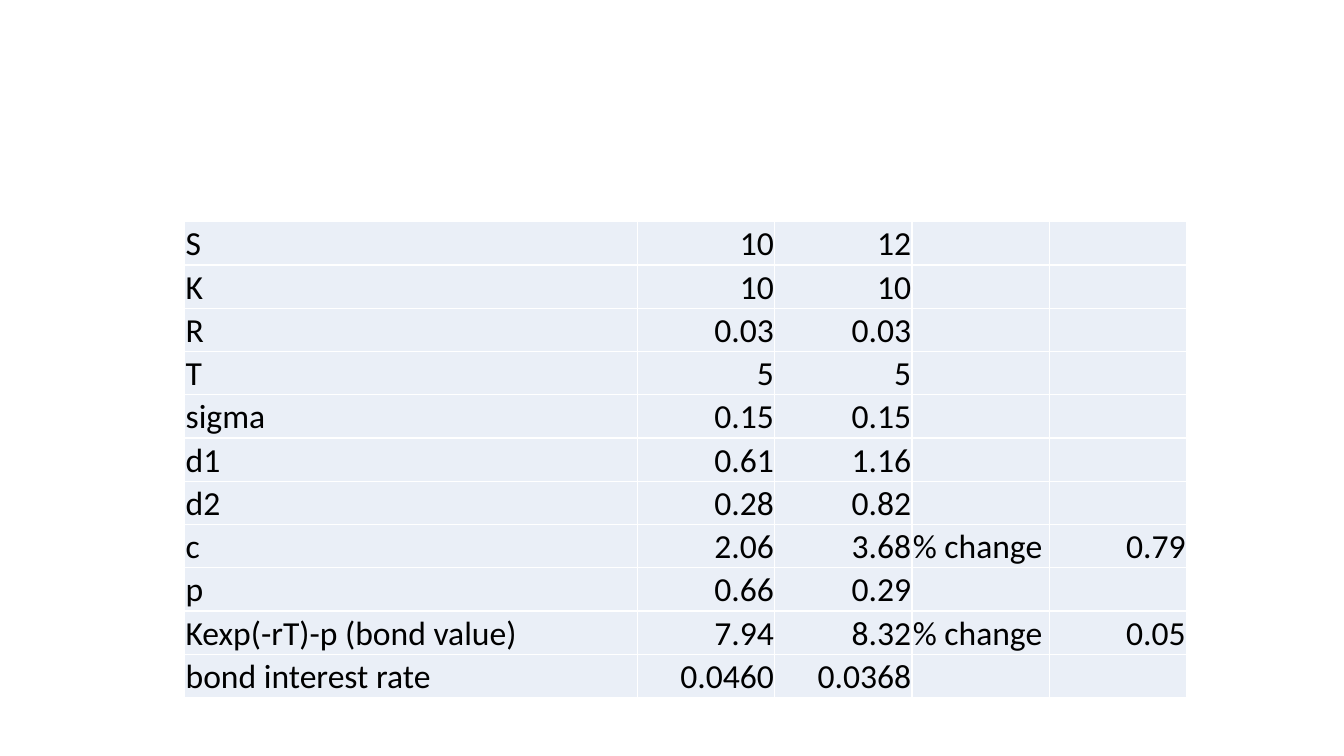
from lxml import etree
from pptx import Presentation
from pptx.dml.color import RGBColor
from pptx.enum.text import MSO_ANCHOR, PP_ALIGN
from pptx.oxml.ns import qn
from pptx.util import Pt

BOTTOM = MSO_ANCHOR.BOTTOM
LEFT, RIGHT = PP_ALIGN.LEFT, PP_ALIGN.RIGHT
BLANK = 6

COLORS = {"text": "000000", "fill": "EAEFF7", "edge": "FFFFFF"}
FONT = {"name": "Calibri", "size": Pt(24), "bold": False}
CELL = {
    "margin_left": Pt(0.6),
    "margin_right": Pt(0.6),
    "margin_top": Pt(0.6),
    "margin_bottom": Pt(0),
    "vertical_anchor": BOTTOM,
}
PLAIN = {"first_row": False, "horz_banding": False}
WIDTHS = [323.4] + [98.05] * 4
ALIGNS = [LEFT, RIGHT, RIGHT, LEFT, RIGHT]
ROWS = [
    ("S", "10", "12"),
    ("K", "10", "10"),
    ("R", "0.03", "0.03"),
    ("T", "5", "5"),
    ("sigma", "0.15", "0.15"),
    ("d1", "0.61", "1.16"),
    ("d2", "0.28", "0.82"),
    ("c", "2.06", "3.68", "% change", "0.79"),
    ("p", "0.66", "0.29"),
    ("Kexp(-rT)-p (bond value)", "7.94", "8.32", "% change", "0.05"),
    ("bond interest rate", "0.0460", "0.0368"),
]


def apply(target, values):
    for name, value in values.items():
        setattr(target, name, value)


class Painter:
    def __init__(self, slide, colors, font):
        self.slide = slide
        self.colors = colors
        self.font = font

    def color(self, name):
        return RGBColor.from_string(self.colors[name])

    def edges(self, cell, width):
        props = cell._tc.get_or_add_tcPr()
        for index, side in enumerate(("lnL", "lnR", "lnT", "lnB")):
            line = etree.Element(qn(f"a:{side}"), w=str(Pt(width)))
            solid = etree.SubElement(line, qn("a:solidFill"))
            etree.SubElement(solid, qn("a:srgbClr"), val=self.colors["edge"])
            props.insert(index, line)

    def cell(self, cell, text, align):
        apply(cell, CELL)
        cell.fill.solid()
        cell.fill.fore_color.rgb = self.color("fill")
        self.edges(cell, 1)
        if text:
            para = cell.text_frame.paragraphs[0]
            para.alignment = align
            run = para.add_run()
            run.text = text
            apply(run.font, self.font)
            run.font.color.rgb = self.color("text")

    def table(self, left, top, height, rows, widths, aligns):
        frame = self.slide.shapes.add_table(
            len(rows), len(widths), Pt(left), Pt(top), Pt(sum(widths)), Pt(height)
        )
        table = frame.table
        apply(table, PLAIN)
        for column, width in zip(table.columns, widths):
            column.width = Pt(width)
        for i, row in enumerate(rows):
            for j, align in enumerate(aligns):
                text = row[j] if j < len(row) else ""
                self.cell(table.cell(i, j), text, align)


def main():
    deck = Presentation()
    apply(deck, {"slide_width": Pt(960), "slide_height": Pt(540)})
    slide = deck.slides.add_slide(deck.slide_layouts[BLANK])
    painter = Painter(slide, COLORS, FONT)
    painter.table(132, 158.4, 339.9, ROWS, WIDTHS, ALIGNS)
    deck.save("out.pptx")


if __name__ == "__main__":
    main()
